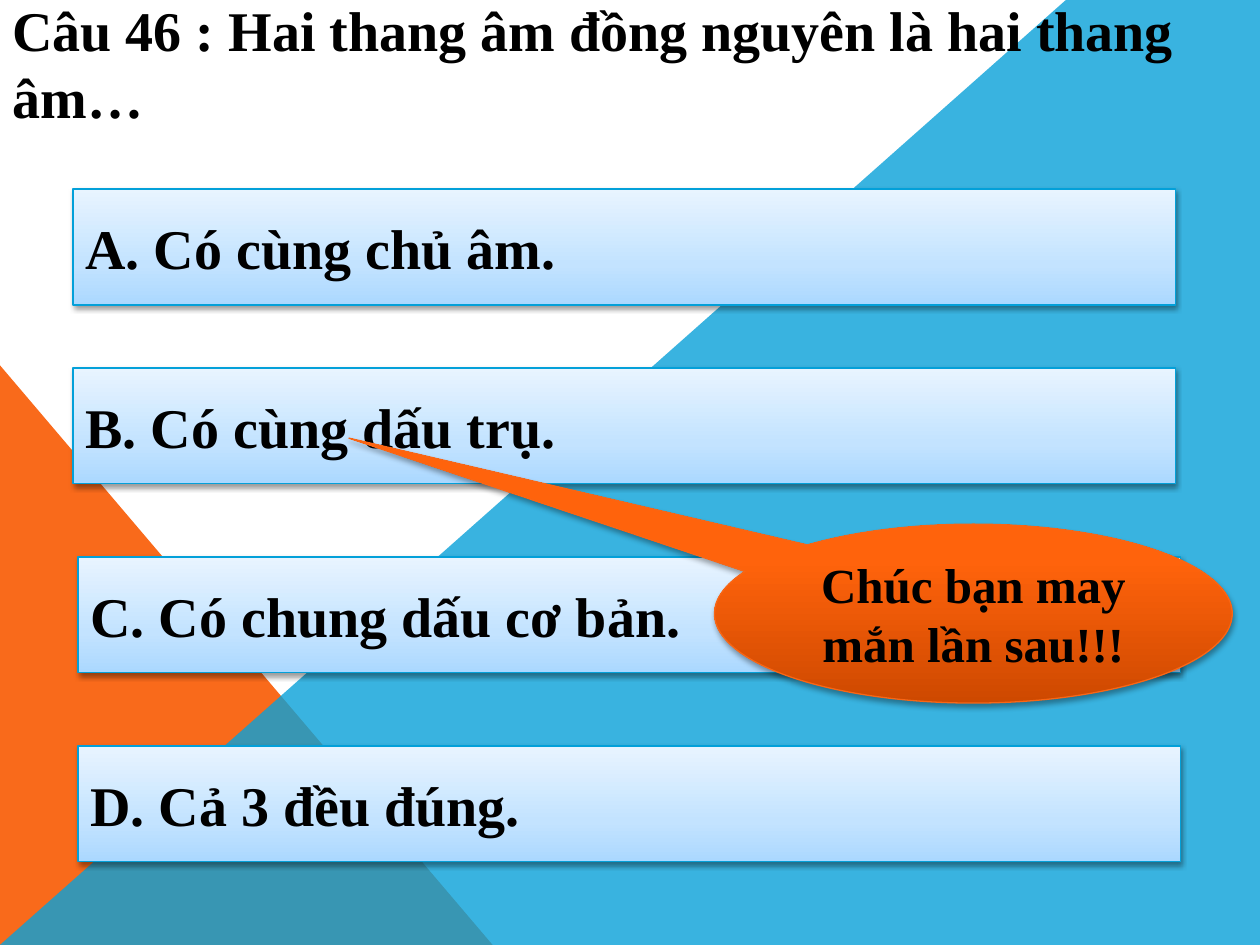
from lxml import etree
from pptx import Presentation
from pptx.dml.color import RGBColor
from pptx.enum.shapes import MSO_SHAPE
from pptx.enum.text import MSO_ANCHOR, PP_ALIGN
from pptx.oxml.ns import qn
from pptx.util import Inches, Pt

RECTANGLE = MSO_SHAPE.RECTANGLE
TRIANGLE = MSO_SHAPE.RIGHT_TRIANGLE
CALLOUT = MSO_SHAPE.OVAL_CALLOUT
MIDDLE = MSO_ANCHOR.MIDDLE
LEFT, CENTER = PP_ALIGN.LEFT, PP_ALIGN.CENTER

# Content
QUESTION = "Câu 46 : Hai thang âm đồng nguyên là hai thang âm…"
ANSWERS = [  # text, column, top
    ("A. Có cùng chủ âm.", 0, 1.5),
    ("B. Có cùng dấu trụ.", 0, 2.92),
    ("C. Có chung dấu cơ bản.", 1, 4.42),
    ("D. Cả 3 đều đúng.", 1, 5.92),
]
FEEDBACK = "Chúc bạn may mắn lần sau!!!"

# Layout in inches
WIDTH, HEIGHT = 10, 7.5
ANSWER_LEFTS = (0.58, 0.62)
ANSWER_SIZE = (8.75, 0.92)
FEEDBACK_AREA = (5.67, 4.16, 4.11, 1.42)
FEEDBACK_TIP = (-1.206, -0.981)
DIAGONAL = [(0, HEIGHT), (8.46, 0), (WIDTH, 0), (WIDTH, HEIGHT)]

THEME = {
    "font": "Times New Roman",
    "text": "000000",
    "size": 32,
    "feedback_size": 28,
    "orange": "F96A1B",
    "blue": "08A1D9",
    "blue_alpha": 80,
    "answer": {
        "stops": [(0, "ABD8FF"), (35, "C3E3FF"), (100, "E8F4FF")],
        "line": "03A0D9", "shadow_alpha": 38, "shadow_distance": 1.6,
    },
    "feedback": {
        "stops": [(0, "CE4900"), (80, "FF630C"), (100, "FF640E")],
        "line": "F96615", "shadow_alpha": 35, "shadow_distance": 1.8,
    },
}


def add_color(parent, color, alpha=None):
    node = etree.SubElement(parent, qn("a:srgbClr"), val=color)
    if alpha is not None:
        etree.SubElement(node, qn("a:alpha"), val=str(alpha * 1000))


def paint_flat(shape, color, alpha=100):
    shape.shadow.inherit = False
    shape.line.fill.background()
    shape.fill.solid()
    shape.fill.fore_color.rgb = RGBColor.from_string(color)
    node = shape.fill._xPr.find(f".//{qn('a:srgbClr')}")
    if alpha < 100:
        etree.SubElement(node, qn("a:alpha"), val=str(alpha * 1000))


def paint_raised(shape, style):
    """Vertical gradient, thin outline and a soft shadow below."""
    shape.fill.gradient()
    shape.fill.gradient_angle = 90
    stops = shape._element.spPr.find(f".//{qn('a:gsLst')}")
    for stop in list(stops):
        stops.remove(stop)
    for position, color in style["stops"]:
        add_color(etree.SubElement(stops, qn("a:gs"), pos=str(position * 1000)), color)
    shape.line.color.rgb = RGBColor.from_string(style["line"])
    shape.line.width = Pt(0.75)
    shape.shadow.inherit = False
    effects = shape._element.spPr.find(qn("a:effectLst"))
    shadow = etree.SubElement(
        effects, qn("a:outerShdw"), blurRad=str(Pt(3.1)),
        dist=str(Pt(style["shadow_distance"])), dir="5400000", rotWithShape="0")
    add_color(shadow, "000000", style["shadow_alpha"])


def write(shape, text, size=THEME["size"], align=LEFT):
    frame = shape.text_frame
    frame.word_wrap = True
    frame.vertical_anchor = MIDDLE
    para = frame.paragraphs[0]
    para.alignment = align
    span = para.add_run()
    span.text = text
    span.font.name = THEME["font"]
    span.font.size = Pt(size)
    span.font.bold = True
    span.font.color.rgb = RGBColor.from_string(THEME["text"])


def area(*lengths):
    return [Inches(length) for length in lengths]


def main():
    deck = Presentation()
    deck.slide_width, deck.slide_height = area(WIDTH, HEIGHT)
    page = deck.slides.add_slide(deck.slide_layouts[6])
    shapes = page.shapes

    # Background
    triangle = shapes.add_shape(TRIANGLE, *area(0, 2.9, 3.91, 4.6))
    paint_flat(triangle, THEME["orange"])
    start, *corners = [area(*point) for point in DIAGONAL]
    builder = shapes.build_freeform(*start)
    builder.add_line_segments(corners, close=True)
    paint_flat(builder.convert_to_shape(), THEME["blue"], THEME["blue_alpha"])

    # Question
    write(shapes.add_textbox(*area(0, 0, WIDTH, 1)), QUESTION)

    # Answers
    for text, column, top in ANSWERS:
        box = shapes.add_shape(RECTANGLE, *area(ANSWER_LEFTS[column], top, *ANSWER_SIZE))
        paint_raised(box, THEME["answer"])
        write(box, text)

    # Feedback on answer B
    callout = shapes.add_shape(CALLOUT, *area(*FEEDBACK_AREA))
    for index, value in enumerate(FEEDBACK_TIP):
        callout.adjustments[index] = value
    paint_raised(callout, THEME["feedback"])
    write(callout, FEEDBACK, size=THEME["feedback_size"], align=CENTER)

    deck.save("out.pptx")


if __name__ == "__main__":
    main()
